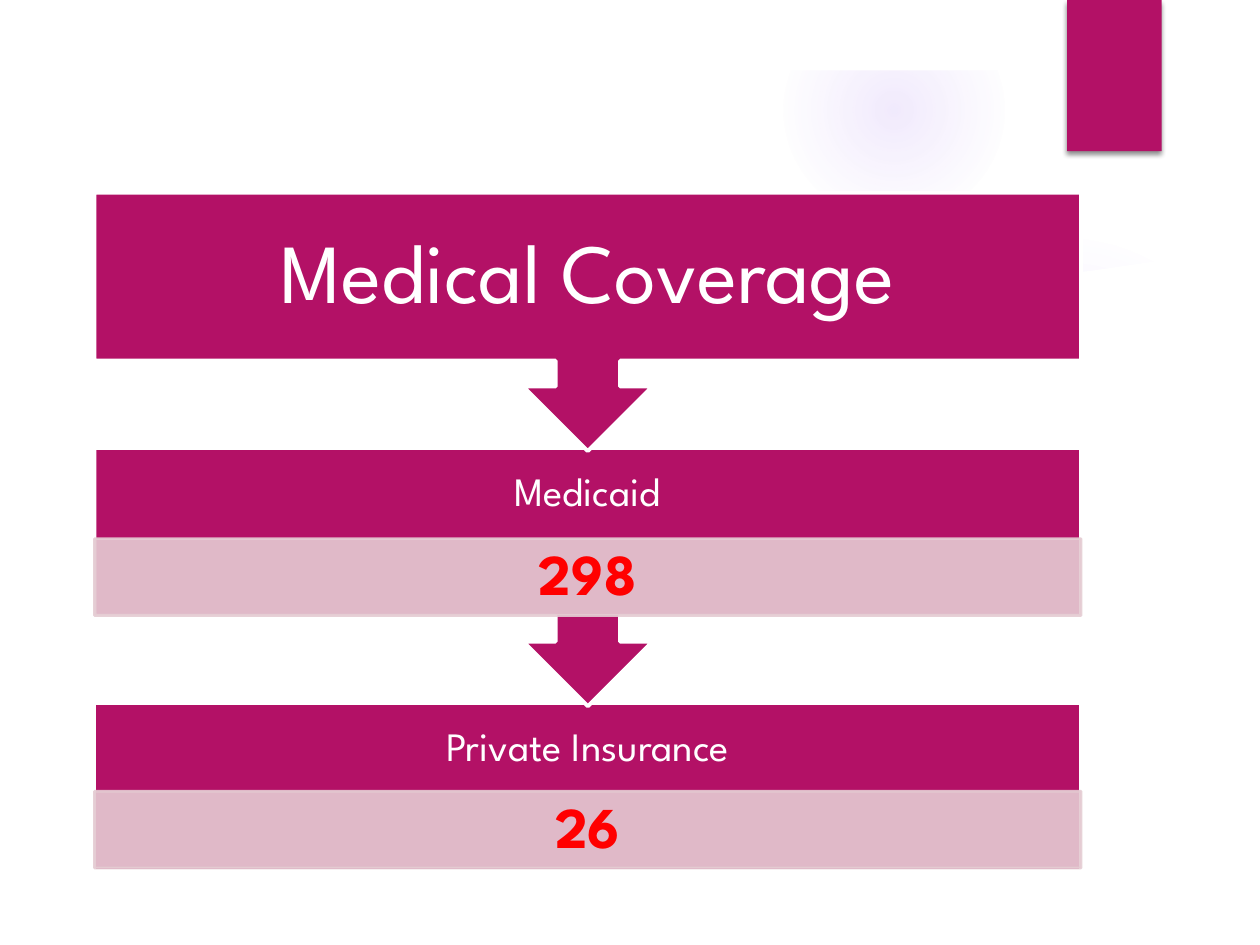
from dataclasses import dataclass
from typing import Optional

from lxml.etree import SubElement
from pptx import Presentation
from pptx.dml.color import RGBColor
from pptx.enum.shapes import MSO_SHAPE
from pptx.enum.text import MSO_ANCHOR, PP_ALIGN
from pptx.oxml.ns import qn
from pptx.util import Inches, Pt

# The slide is a grid of 100 columns by 75 rows of square cells.
COLUMNS, ROWS = 100, 75
CELL = Inches(0.1)


@dataclass(frozen=True)
class Theme:
    font: str = "League Spartan"
    accent: str = "B31166"
    band: str = "E5CCD3"
    glow: str = "9B6BF2"
    paper: str = "FFFFFF"
    value: str = "FF0000"
    shadow: str = "000000"
    title_size: float = 48
    label_size: float = 23
    value_size: float = 33


@dataclass(frozen=True)
class Area:
    column: float
    row: float
    columns: float
    rows: float

    def lengths(self) -> list[int]:
        return [cells(n) for n in (self.column, self.row, self.columns, self.rows)]


@dataclass(frozen=True)
class Glow:
    area: Area
    stops: tuple[tuple[int, int], ...]  # position and opacity, in percent


@dataclass(frozen=True)
class Step:
    label: str
    size: float
    label_rows: float
    inset: float
    value: Optional[str] = None
    value_row: float = 0


THEME = Theme()
LEFT, WIDTH = 7.5, 78.3
FIRST_ROW, STEP_PITCH = 15.3, 20.25
BOX_ROWS, CALLOUT_ROWS, VALUE_ROWS = 13.3, 20.5, 6.1

GLOWS = [
    Glow(Area(68.9, 18.3, 30.8, 30.8), ((0, 7), (36, 6), (69, 0))),
    Glow(Area(62.2, 0, 17.5, 17.5), ((0, 14), (36, 7), (73, 0))),
]
PANEL_CURVE = [
    (94.7, 20.3), (86.6, 21.5), (78.5, 22.4), (70.4, 22.9), (62.5, 23.3),
    (54.8, 23.4), (43.9, 23.4), (33.8, 23), (24.9, 22.4), (13.2, 21.3), (5.3, 20.3),
]
PANEL_BASE = [(5.3, 69.9), (94.7, 69.9)]
STEPS = [
    Step("Medical Coverage", THEME.title_size, 13.3, 3.7),
    Step("Medicaid", THEME.label_size, 7.2, 1.8, "298", 7.2),
    Step("Private Insurance", THEME.label_size, 7.2, 1.8, "26", 7),
]


def cells(count: float) -> int:
    return round(count * CELL)


def add_block(slide, kind, area: Area, color: str, line: Optional[str] = None,
              line_width: float = 0):
    shape = slide.shapes.add_shape(kind, *area.lengths())
    paint(shape, color)
    if line:
        shape.line.color.rgb = RGBColor.from_string(line)
        shape.line.width = Pt(line_width)
    return shape


def paint(shape, color: str) -> None:
    shape.shadow.inherit = False
    shape.fill.solid()
    shape.fill.fore_color.rgb = RGBColor.from_string(color)
    shape.line.fill.background()


def add_color(parent, color: str, opacity: int) -> None:
    element = SubElement(parent, qn("a:srgbClr"), val=color)
    SubElement(element, qn("a:alpha"), val=str(opacity * 1000))


def add_glow(slide, glow: Glow) -> None:
    shape = add_block(slide, MSO_SHAPE.OVAL, glow.area, THEME.glow)
    solid = shape.element.spPr.find(qn("a:solidFill"))
    gradient = SubElement(shape.element.spPr, qn("a:gradFill"), rotWithShape="1")
    solid.getparent().replace(solid, gradient)
    stops = SubElement(gradient, qn("a:gsLst"))
    for position, opacity in glow.stops:
        stop = SubElement(stops, qn("a:gs"), pos=str(position * 1000))
        add_color(stop, THEME.glow, opacity)
    circle = SubElement(gradient, qn("a:path"), path="circle")
    SubElement(circle, qn("a:fillToRect"), l="50000", t="50000", r="50000", b="50000")


def add_backdrop(slide) -> None:
    for glow in GLOWS:
        add_glow(slide, glow)
    start, *rest = [(cells(x), cells(y)) for x, y in PANEL_CURVE + PANEL_BASE]
    builder = slide.shapes.build_freeform(*start)
    builder.add_line_segments(rest)
    paint(builder.convert_to_shape(), THEME.paper)
    frame = add_block(slide, MSO_SHAPE.FRAME, Area(0, 0, COLUMNS, ROWS), THEME.paper)
    frame.adjustments[0] = 5.6 / ROWS


def add_corner_tab(slide) -> None:
    tab = add_block(slide, MSO_SHAPE.RECTANGLE, Area(84.7, 0, 7.5, 12), THEME.accent)
    effects = tab.element.spPr.find(qn("a:effectLst"))
    shadow = SubElement(effects, qn("a:outerShdw"), blurRad=str(Pt(3)),
                        dist=str(Pt(2)), dir="5400000", rotWithShape="0")
    add_color(shadow, THEME.shadow, 45)


def add_text(slide, area: Area, text: str, size: float, color: str,
             side_inset: float, end_inset: float, bold: bool = False) -> None:
    frame = slide.shapes.add_textbox(*area.lengths()).text_frame
    frame.word_wrap = True
    frame.vertical_anchor = MSO_ANCHOR.MIDDLE
    frame.margin_left = frame.margin_right = cells(side_inset)
    frame.margin_top = frame.margin_bottom = cells(end_inset)
    paragraph = frame.paragraphs[0]
    paragraph.text = text
    paragraph.alignment = PP_ALIGN.CENTER
    paragraph.line_spacing = 0.9
    paragraph.font.name = THEME.font
    paragraph.font.size = Pt(size)
    paragraph.font.bold = bold
    paragraph.font.color.rgb = RGBColor.from_string(color)


def add_value(slide, area: Area, value: str) -> None:
    band = add_block(slide, MSO_SHAPE.RECTANGLE, area, THEME.band, THEME.band, 1.5)
    for color in band.element.spPr.iter(qn("a:srgbClr")):
        SubElement(color, qn("a:alpha"), val="90000")
    add_text(slide, area, value, THEME.value_size, THEME.value, 2.6, 0.5, bold=True)


def add_step(slide, step: Step, row: float, is_last: bool) -> None:
    """Draw one step; every step but the last points down to the next."""
    kind = MSO_SHAPE.RECTANGLE if is_last else MSO_SHAPE.UP_ARROW_CALLOUT
    rows = BOX_ROWS if is_last else CALLOUT_ROWS
    box = add_block(slide, kind, Area(LEFT, row, WIDTH, rows), THEME.accent,
                    THEME.paper, 2.25)
    box.rotation = 0 if is_last else 180
    add_text(slide, Area(LEFT, row, WIDTH, step.label_rows), step.label, step.size,
             THEME.paper, step.inset, step.inset)
    if step.value:
        add_value(slide, Area(LEFT, row + step.value_row, WIDTH, VALUE_ROWS), step.value)


def main() -> None:
    presentation = Presentation()
    presentation.slide_width = cells(COLUMNS)
    presentation.slide_height = cells(ROWS)
    slide = presentation.slides.add_slide(presentation.slide_layouts[6])
    add_backdrop(slide)
    add_corner_tab(slide)
    last = len(STEPS) - 1
    for index in range(last, -1, -1):
        add_step(slide, STEPS[index], FIRST_ROW + index * STEP_PITCH, index == last)
    presentation.save("out.pptx")


if __name__ == "__main__":
    main()
